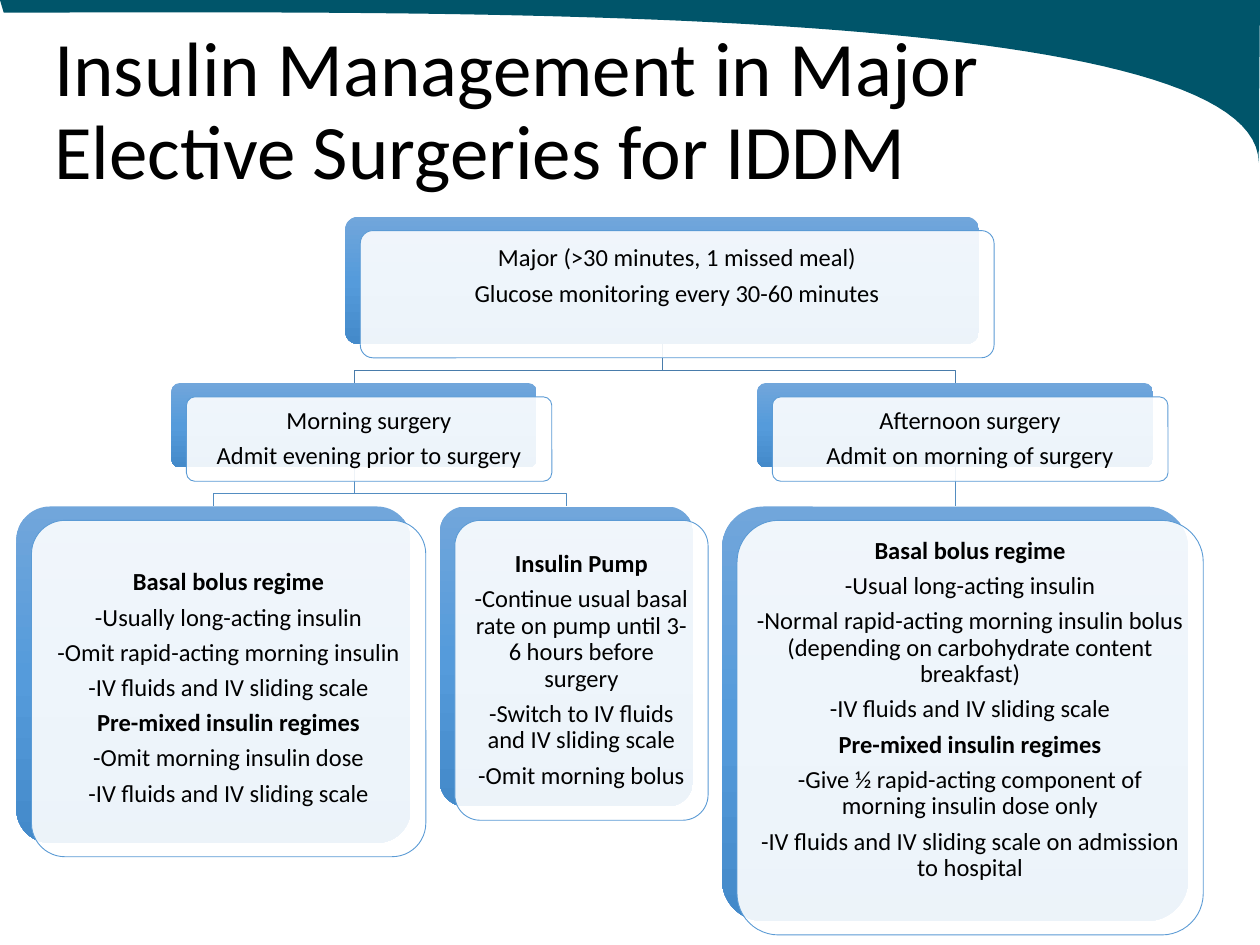
from copy import deepcopy

from lxml import etree
from pptx import Presentation
from pptx.dml.color import RGBColor
from pptx.enum import shapes, text
from pptx.oxml.ns import qn
from pptx.util import Inches, Pt

TITLE = "Insulin Management in Major Elective Surgeries for IDDM"

# name: parent, (left, top, width, height), extra bottom inset, lines;
# a line that starts with * is a bold heading
CARDS = {
    "major": (None, (2.74, 1.72, 5.03, 1.01), 0.28, [
        "Major (>30 minutes, 1 missed meal)",
        "Glucose monitoring every 30-60 minutes"]),
    "morning": ("major", (1.36, 3.04, 2.9, 0.67), 0, [
        "Morning surgery",
        "Admit evening prior to surgery"]),
    "morning bolus": ("morning", (0.13, 4.02, 3.13, 2.67), 0, [
        "*Basal bolus regime",
        "-Usually long-acting insulin",
        "-Omit rapid-acting morning insulin",
        "-IV fluids and IV sliding scale",
        "*Pre-mixed insulin regimes",
        "-Omit morning insulin dose",
        "-IV fluids and IV sliding scale"]),
    "pump": ("morning", (3.49, 4.02, 2.01, 2.38), 0, [
        "*Insulin Pump",
        "-Continue usual basal rate on pump until 3-6 hours before surgery",
        "-Switch to IV fluids and IV sliding scale",
        "-Omit morning bolus"]),
    "afternoon": ("major", (6.01, 3.04, 3.14, 0.67), 0, [
        "Afternoon surgery",
        "Admit on morning of surgery"]),
    "afternoon bolus": ("afternoon", (5.73, 4.02, 3.7, 3.29), 0.28, [
        "*Basal bolus regime",
        "-Usual long-acting insulin",
        "-Normal rapid-acting morning insulin bolus "
        "(depending on carbohydrate content breakfast)",
        "-IV fluids and IV sliding scale",
        "*Pre-mixed insulin regimes",
        "-Give ½ rapid-acting component of morning insulin dose only",
        "-IV fluids and IV sliding scale on admission to hospital"]),
}

THEME = dict(
    font="Calibri", title=44, body=14, ink="000000", swoosh="00556A",
    gradient=[(0, "71A6DB"), (0.5, "559BDB"), (1, "448ACA")],
    card="FFFFFF", card_alpha=90, border="5B9BD5",
    links={"major": "497CAB", "morning": "538DC1", "afternoon": "538DC1"},
    line=0.5)
OFFSET = (0.12, 0.11)   # front panel relative to its backing
BEND = 0.1              # height of a link's bend above the child
INSET = 0.06


def rgb(value):
    return RGBColor.from_string(value)


def set_line(sp, color):
    sp.line.color.rgb = rgb(color)
    sp.line.width = Pt(THEME["line"])


def style_text(p, size, bold=False):
    p.line_spacing = 0.9
    for r in p.runs:
        r.font.name, r.font.size, r.font.bold = THEME["font"], Pt(size), bold
        r.font.color.rgb = rgb(THEME["ink"])


def add_path(slide, points, close):
    """Draw straight segments through points given in inches."""
    start, *rest = [(Inches(x), Inches(y)) for x, y in points]
    builder = slide.shapes.build_freeform(*start)
    builder.add_line_segments(rest, close=close)
    sp = builder.convert_to_shape()
    sp.shadow.inherit = False
    return sp


def bezier(p0, p1, p2, p3, steps=60):
    ts = [i / steps for i in range(steps + 1)]
    return [tuple((1 - t) ** 3 * a + 3 * (1 - t) ** 2 * t * b
                  + 3 * (1 - t) * t ** 2 * c + t ** 3 * d
                  for a, b, c, d in zip(p0, p1, p2, p3)) for t in ts]


def add_swoosh(slide):
    curve = bezier((9.99, 1.29), (9.98, 0), (3.36, 0.1), (0.03, 0.1))
    sp = add_path(slide, [(0, 0), (10, 0)] + curve, close=True)
    sp.fill.solid()
    sp.fill.fore_color.rgb = rgb(THEME["swoosh"])
    sp.line.fill.background()
    return sp


def add_panel(slide, left, top, width, height):
    sp = slide.shapes.add_shape(
        shapes.MSO_SHAPE.ROUNDED_RECTANGLE,
        *map(Inches, (left, top, width, height)))
    sp.adjustments[0] = 0.1
    sp.shadow.inherit = False
    return sp


def add_card(slide, box, bottom, lines):
    """Add a gradient backing and a translucent text panel; return the backing."""
    back = add_panel(slide, *box)
    back.line.fill.background()
    back.fill.gradient()
    back.fill.gradient_angle = 270
    first = back.element.spPr.find(".//" + qn("a:gs"))
    first.addnext(deepcopy(first))
    for stop, (position, color) in zip(back.fill.gradient_stops, THEME["gradient"]):
        stop.position, stop.color.rgb = position, rgb(color)

    left, top, width, height = box
    front = add_panel(slide, left + OFFSET[0], top + OFFSET[1], width, height)
    front.fill.solid()
    front.fill.fore_color.rgb = rgb(THEME["card"])
    color = front.element.spPr.find(".//" + qn("a:srgbClr"))
    etree.SubElement(color, qn("a:alpha"), val=str(THEME["card_alpha"] * 1000))
    set_line(front, THEME["border"])

    tf = front.text_frame
    tf.word_wrap = True
    tf.vertical_anchor = text.MSO_ANCHOR.MIDDLE
    tf.margin_left = tf.margin_right = tf.margin_top = Inches(INSET)
    tf.margin_bottom = Inches(INSET + bottom)
    tf.text = "\n".join(line.lstrip("*") for line in lines)
    for p, line in zip(tf.paragraphs, lines):
        p.alignment = text.PP_ALIGN.CENTER
        p.space_after = Pt(5)
        style_text(p, THEME["body"], line.startswith("*"))
    return back


def add_link(slide, parent, child, color):
    """Join two backings: straight if they are centred, else with a bend."""
    x1, x2 = ((sp.left + sp.width / 2) / Inches(1) for sp in (parent, child))
    y1, y2 = (parent.top + parent.height) / Inches(1), child.top / Inches(1)
    if abs(x1 - x2) < 0.02:
        link = slide.shapes.add_connector(
            shapes.MSO_CONNECTOR.STRAIGHT, *map(Inches, (x1, y1, x2, y2)))
        link.begin_connect(parent, 2)
        link.end_connect(child, 0)
        etree.SubElement(link.element.spPr, qn("a:effectLst"))
    else:
        bend = y2 - BEND
        link = add_path(slide, [(x1, y1), (x1, bend), (x2, bend), (x2, y2)],
                        close=False)
        link.fill.background()
    set_line(link, color)
    return link


def main():
    prs = Presentation()
    prs.slide_width, prs.slide_height = Inches(10), Inches(7.5)
    slide = prs.slides.add_slide(prs.slide_layouts[5])

    title = slide.shapes.title
    title.left, title.top, title.width, title.height = map(
        Inches, (0.33, 0.17, 8, 1.45))
    tf = title.text_frame
    tf.text = TITLE
    tf.word_wrap = True
    tf.auto_size = text.MSO_AUTO_SIZE.NONE
    tf.vertical_anchor = text.MSO_ANCHOR.MIDDLE
    tf.paragraphs[0].alignment = text.PP_ALIGN.LEFT
    style_text(tf.paragraphs[0], THEME["title"])
    title.element.addprevious(add_swoosh(slide).element)

    backs = {name: add_card(slide, box, bottom, lines)
             for name, (_, box, bottom, lines) in CARDS.items()}
    for name, (parent, *_) in CARDS.items():
        if parent:
            link = add_link(slide, backs[parent], backs[name],
                            THEME["links"][parent])
            backs["major"].element.addprevious(link.element)

    prs.save("out.pptx")


if __name__ == "__main__":
    main()
